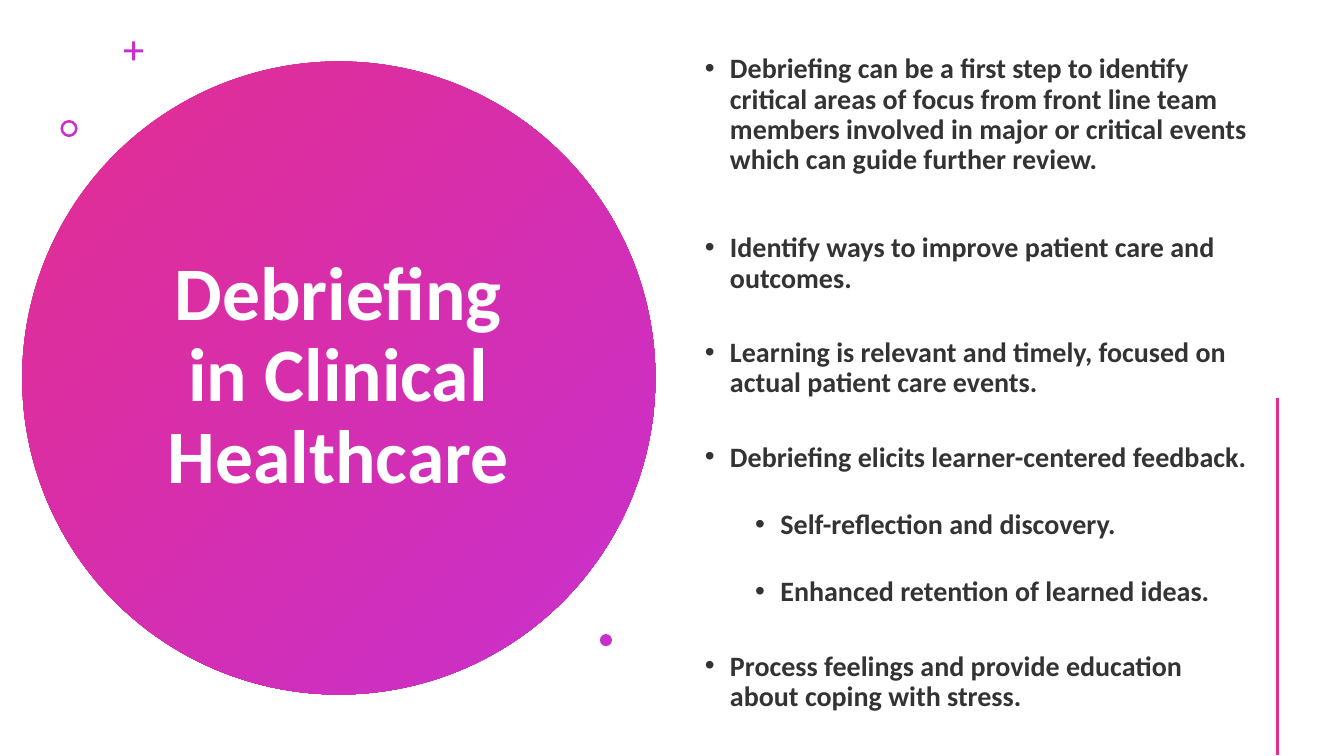
from lxml import etree
from pptx import Presentation
from pptx.dml.color import RGBColor
from pptx.enum.shapes import MSO_CONNECTOR, MSO_SHAPE
from pptx.enum.text import MSO_ANCHOR, MSO_AUTO_SIZE, PP_ALIGN
from pptx.oxml.ns import qn
from pptx.util import Inches, Pt

STRAIGHT = MSO_CONNECTOR.STRAIGHT
OVAL, DONUT, CROSS = MSO_SHAPE.OVAL, MSO_SHAPE.DONUT, MSO_SHAPE.CROSS
MIDDLE, NO_FIT, CENTER = MSO_ANCHOR.MIDDLE, MSO_AUTO_SIZE.NONE, PP_ALIGN.CENTER

COLORS = {"pink": "E32D91", "violet": "C830CC", "text": "333333", "white": "FFFFFF"}

TITLE = "Debriefing in Clinical Healthcare"
# Level, space before in points, text
POINTS = [
    (0, 0, "Debriefing can be a first step to identify critical areas of focus from "
           "front line team members involved in major or critical events which can "
           "guide further review."),
    (0, 41.5, "Identify ways to improve patient care and outcomes."),
    (0, 31.5, "Learning is relevant and timely, focused on actual patient care events."),
    (0, 31.5, "Debriefing elicits learner-centered feedback."),
    (1, 26.5, "Self-reflection and discovery."),
    (1, 26.5, "Enhanced retention of learned ideas."),
    (0, 31.5, "Process feelings and provide education about coping with stress."),
]
# Shape, left, top, size, adjustment
ORNAMENTS = [
    (CROSS, 1.23, 0.41, 0.19, 0.42),
    (DONUT, 0.6, 1.19, 0.17, 0.15),
    (OVAL, 5.95, 6.29, 0.12, None),
]
TITLE_FONT = {"name": "Calibri", "size": Pt(54), "bold": True}
BODY_FONT = {"name": "Calibri", "size": Pt(20), "bold": True}


def color(name):
    return RGBColor.from_string(COLORS[name])


def place(box, left, top, width, height):
    box.left, box.top = Inches(left), Inches(top)
    box.width, box.height = Inches(width), Inches(height)
    frame = box.text_frame
    frame.word_wrap, frame.auto_size, frame.vertical_anchor = True, NO_FIT, MIDDLE
    return frame


def style(font, values, color_name):
    for name, value in values.items():
        setattr(font, name, value)
    font.color.rgb = color(color_name)


def add_bullet(para, level):
    properties = para._p.get_or_add_pPr()
    properties.set("marL", str(Inches(0.25 + 0.5 * level)))
    properties.set("indent", str(Inches(-0.25)))
    etree.SubElement(properties, qn("a:buFont")).set("typeface", "Arial")
    etree.SubElement(properties, qn("a:buChar")).set("char", "•")


def add_shape(slide, kind, left, top, size):
    shape = slide.shapes.add_shape(kind, Inches(left), Inches(top), Inches(size), Inches(size))
    shape.shadow.inherit = False
    shape.line.fill.background()
    return shape


deck = Presentation()
deck.slide_width, deck.slide_height = Inches(13.33), Inches(7.5)
slide = deck.slides.add_slide(deck.slide_layouts[1])

# Large gradient circle, behind the title
circle = add_shape(slide, OVAL, 0.22, 0.61, 6.28)
circle.fill.gradient()
circle.fill.gradient_angle = 315
for stop, position, name in zip(circle.fill.gradient_stops, (0, 1), ("pink", "violet")):
    stop.position, stop.color.rgb = position, color(name)
slide.shapes._spTree.insert(2, circle._element)

# Title
title = place(slide.shapes.title, 1.36, 1.41, 3.99, 4.67)
title.text = TITLE
para = title.paragraphs[0]
para.alignment, para.line_spacing = CENTER, 0.9
style(para.runs[0].font, TITLE_FONT, "white")

# Bullet list
body = place(slide.placeholders[1], 6.89, 0.33, 5.59, 6.95)
for index, (level, space, text) in enumerate(POINTS):
    para = body.add_paragraph() if index else body.paragraphs[0]
    para.level, para.line_spacing, para.space_before = level, 0.9, Pt(space)
    add_bullet(para, level)
    span = para.add_run()
    span.text = text
    style(span.font, BODY_FONT, "text")

# Small ornaments
for kind, left, top, size, adjustment in ORNAMENTS:
    ornament = add_shape(slide, kind, left, top, size)
    ornament.fill.solid()
    ornament.fill.fore_color.rgb = color("violet")
    if adjustment is not None:
        ornament.adjustments[0] = adjustment

# Vertical rule at the right edge
rule = slide.shapes.add_connector(
    STRAIGHT, Inches(12.67), Inches(3.95), Inches(12.67), Inches(7.49))
rule.line.width = Pt(2)
rule.line.color.rgb = color("pink")
etree.SubElement(rule._element.spPr, qn("a:effectLst"))

deck.save("out.pptx")
